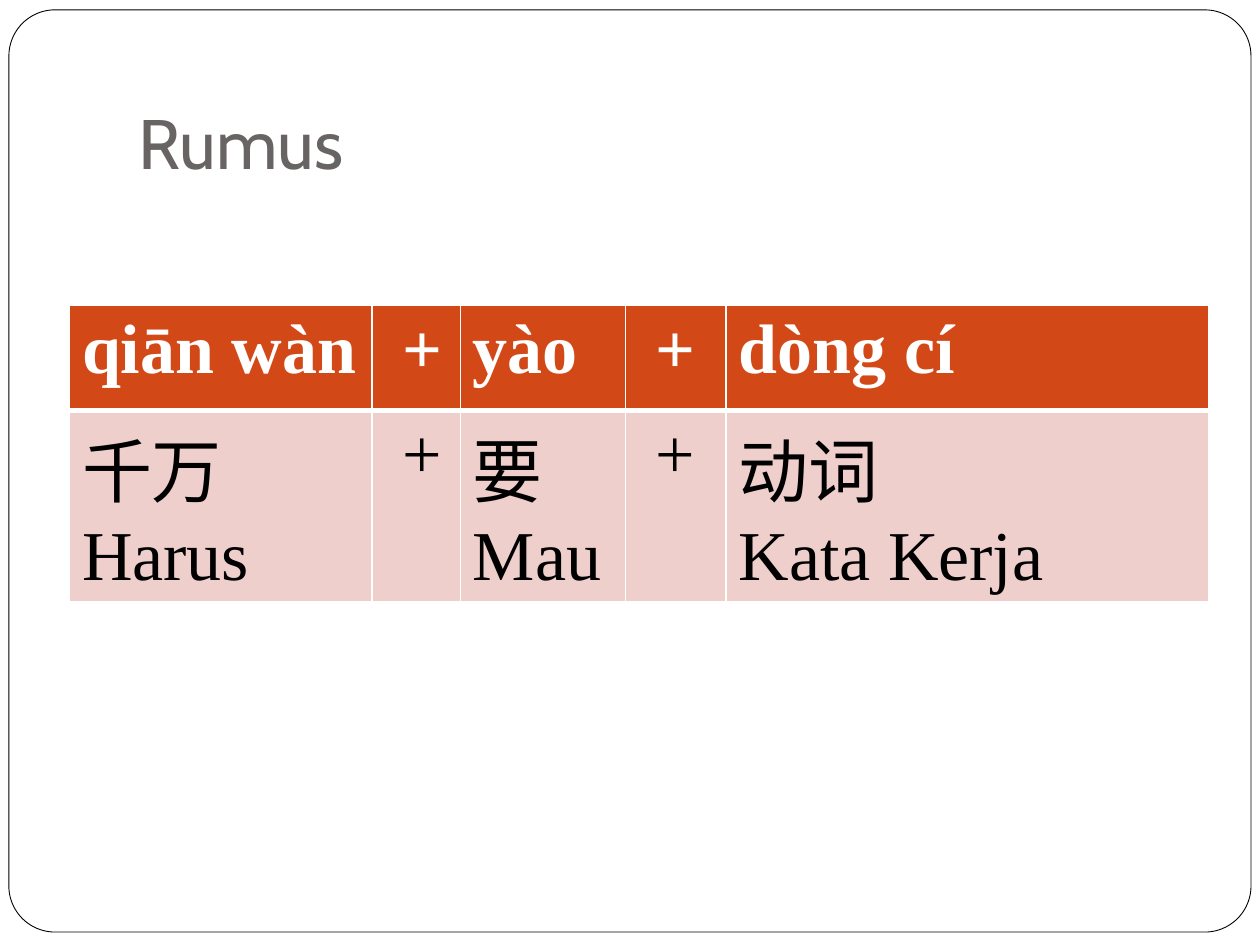
from pptx import Presentation
from pptx.dml.color import RGBColor
from pptx.enum.shapes import MSO_SHAPE as Shape
from pptx.enum.text import MSO_ANCHOR as Anchor, MSO_AUTO_SIZE as AutoSize, PP_ALIGN as Align
from pptx.oxml.ns import qn
from pptx.util import Cm, Pt
from lxml.etree import SubElement

COLORS = {
    "paper": "FFFFFF",
    "ink": "000000",
    "title": "696464",
    "header": "D34817",
    "body": "EFCFCC",
}
FORMULA = [
    ["qiān wàn", "+", "yào", "+", "dòng cí"],
    ["千万\nHarus", "+", "要\nMau", "+", "动词\nKata Kerja"],
]
COLUMN_WIDTHS = [6.1, 1.78, 3.33, 2.03, 9.73]
ROW_HEIGHTS = [2.12, 3.8]


def color(name):
    return RGBColor.from_string(COLORS[name])


def style_font(font, name, ink, bold=False):
    font.name, font.size, font.bold = name, Pt(40), bold
    font.color.rgb = color(ink)


def add_title(page, text):
    title = page.shapes.title
    title.left, title.top, title.width, title.height = Cm(2.54), Cm(0.76), Cm(21.59), Cm(3.18)
    frame = title.text_frame
    frame.text = text
    frame.auto_size = AutoSize.NONE
    frame.vertical_anchor = Anchor.BOTTOM
    frame.margin_bottom = Cm(0.25)
    frame.paragraphs[0].alignment = Align.LEFT
    style_font(frame.paragraphs[0].font, "Cabin", "title")


def add_border(page):
    border = page.shapes.add_shape(
        Shape.ROUNDED_RECTANGLE, Cm(0.18), Cm(0.2), Cm(25.04), Cm(18.59))
    border.adjustments[0] = 0.05
    border.shadow.inherit = False
    border.fill.solid()
    border.fill.fore_color.rgb = color("paper")
    border.line.color.rgb = color("ink")
    border.line.width = Pt(0.5)
    # Keep the border behind the title
    page.shapes.title.element.addprevious(border.element)


def set_borders(cell, widths):
    properties = cell._tc.get_or_add_tcPr()
    for side, width in widths.items():
        line = SubElement(properties, qn(f"a:ln{side}"), w=str(Pt(width)))
        fill = SubElement(line, qn("a:solidFill"))
        SubElement(fill, qn("a:srgbClr"), val=COLORS["paper"])


def fill_cell(cell, text, is_header):
    rule = 3 if is_header else 1
    set_borders(cell, {"L": 1, "R": 1, "T": 1 if is_header else 3, "B": rule})
    cell.fill.solid()
    cell.fill.fore_color.rgb = color("header" if is_header else "body")
    if text == "+":
        cell.margin_left = Cm(0.61)
    cell.text = text
    for paragraph in cell.text_frame.paragraphs:
        style_font(paragraph.font, "Times New Roman",
                   "paper" if is_header else "ink", is_header)


def add_formula_table(page):
    table = page.shapes.add_table(
        len(FORMULA), len(COLUMN_WIDTHS), Cm(1.4), Cm(6.15),
        Cm(sum(COLUMN_WIDTHS)), Cm(sum(ROW_HEIGHTS))).table
    for column, width in zip(table.columns, COLUMN_WIDTHS):
        column.width = Cm(width)
    for index, (row, height) in enumerate(zip(table.rows, ROW_HEIGHTS)):
        row.height = Cm(height)
        for cell, text in zip(row.cells, FORMULA[index]):
            fill_cell(cell, text, is_header=index == 0)


def main():
    deck = Presentation()
    deck.slide_width, deck.slide_height = Cm(25.4), Cm(19.05)
    page = deck.slides.add_slide(deck.slide_layouts[5])

    # Frame and heading
    add_title(page, "Rumus")
    add_border(page)

    # Sentence pattern
    add_formula_table(page)
    deck.save("out.pptx")


if __name__ == "__main__":
    main()
